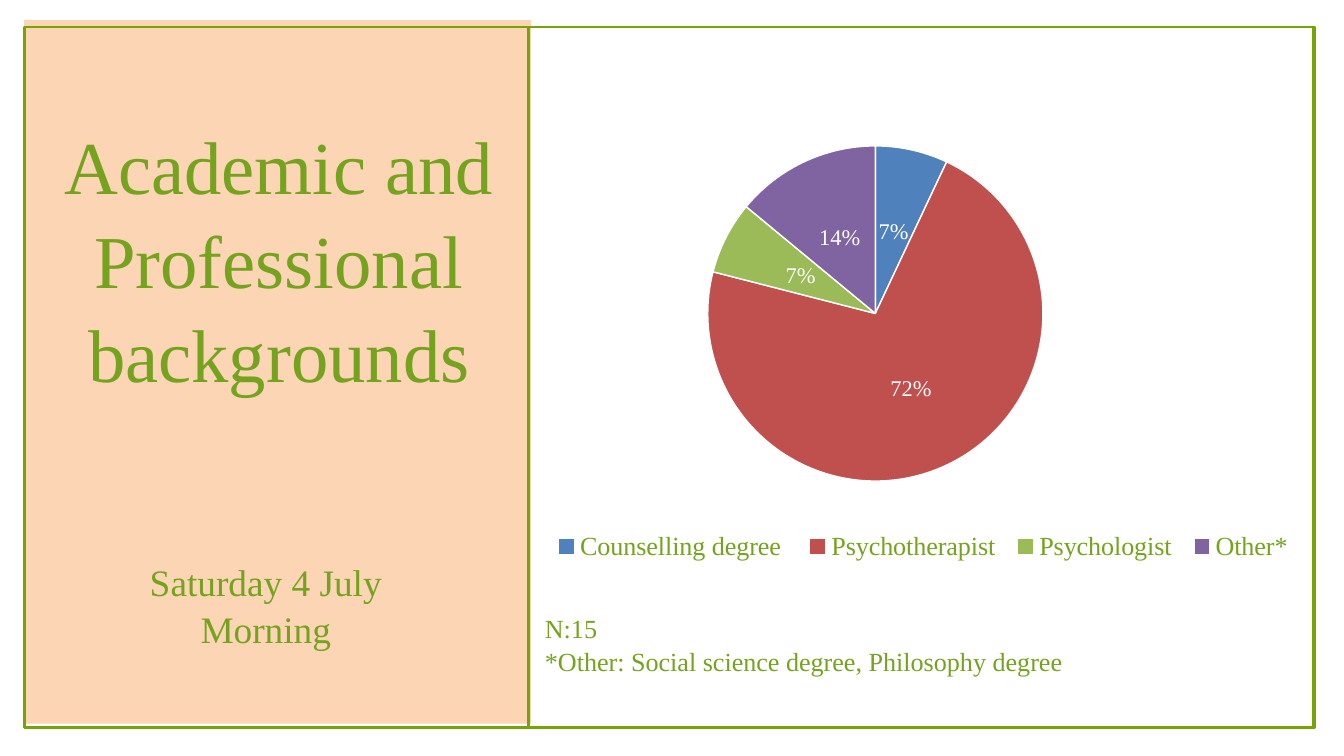
from lxml.etree import SubElement
from pptx import Presentation
from pptx.chart.data import CategoryChartData
from pptx.dml.color import RGBColor
from pptx.enum.chart import XL_CHART_TYPE as ChartType
from pptx.enum.chart import XL_LABEL_POSITION as LabelPosition
from pptx.enum.chart import XL_LEGEND_POSITION as LegendPosition
from pptx.enum.shapes import MSO_SHAPE as Shape
from pptx.enum.text import MSO_ANCHOR as Anchor
from pptx.enum.text import MSO_AUTO_SIZE as AutoSize
from pptx.enum.text import PP_ALIGN as Align
from pptx.oxml.ns import qn
from pptx.util import Inches, Pt

WIDTH, HEIGHT = Inches(20), Inches(11.25)
TITLE_ONLY = 5

PEACH = RGBColor(0xFC, 0xD5, 0xB5)
FRAME_GREEN = RGBColor(0x75, 0xA4, 0x05)
TEXT_GREEN = RGBColor(0x76, 0xA3, 0x1F)
WHITE = RGBColor(0xFF, 0xFF, 0xFF)

FONT = "Times New Roman"
LINE_SPACING = 1.05
FRAME_TOP, FRAME_HEIGHT, FRAME_LINE = 0.38, 10.47, 0.04

# Category, percentage, slice colour
BACKGROUNDS = [
    ("Counselling degree ", 7, RGBColor(0x4F, 0x81, 0xBD)),
    ("Psychotherapist", 72, RGBColor(0xC0, 0x50, 0x4D)),
    ("Psychologist", 7, RGBColor(0x9B, 0xBB, 0x59)),
    ("Other*", 14, RGBColor(0x80, 0x64, 0xA2)),
]


def box(left, top, width, height):
    return [Inches(length) for length in (left, top, width, height)]


def style_font(font, size, color):
    font.name = FONT
    font.size = Pt(size)
    font.color.rgb = color


def add_panel(slide, left, top, width, height):
    panel = slide.shapes.add_shape(Shape.RECTANGLE, *box(left, top, width, height))
    panel.shadow.inherit = False
    panel.fill.solid()
    panel.fill.fore_color.rgb = PEACH
    panel.line.fill.background()


def add_frame(slide, left, width):
    """Add an outline whose outer edge spans the given width."""
    half = FRAME_LINE / 2
    frame = slide.shapes.add_shape(
        Shape.RECTANGLE,
        *box(left + half, FRAME_TOP + half, width - FRAME_LINE, FRAME_HEIGHT - FRAME_LINE),
    )
    frame.shadow.inherit = False
    frame.fill.background()
    frame.line.color.rgb = FRAME_GREEN
    frame.line.width = Inches(FRAME_LINE)


def write_lines(text_frame, lines, size, align):
    text_frame.word_wrap = True
    text_frame.auto_size = AutoSize.NONE
    text_frame.vertical_anchor = Anchor.TOP
    for index, line in enumerate(lines):
        paragraph = text_frame.add_paragraph() if index else text_frame.paragraphs[0]
        paragraph.alignment = align
        paragraph.line_spacing = LINE_SPACING
        run = paragraph.add_run()
        run.text = line
        style_font(run.font, size, TEXT_GREEN)


def place_title(slide, text):
    title = slide.shapes.title
    title.left, title.top, title.width, title.height = box(0.82, 1.72, 6.66, 4.04)
    frame = title.text_frame
    frame.margin_left = frame.margin_right = frame.margin_top = frame.margin_bottom = 0
    write_lines(frame, [text], 80, Align.CENTER)
    slide.shapes._spTree.append(title._element)  # bring in front of the panel


def add_text(slide, bounds, lines, size, align=Align.LEFT):
    text_box = slide.shapes.add_textbox(*box(*bounds))
    write_lines(text_box.text_frame, lines, size, align)


def set_layout(parent, position, left, top, width, height, inner=False):
    """Place a chart part by shares of the chart's size."""
    for old in parent.findall(qn("c:layout")):
        parent.remove(old)
    layout = SubElement(parent, qn("c:layout"))
    parent.insert(position, layout)
    manual = SubElement(layout, qn("c:manualLayout"))
    settings = [("layoutTarget", "inner")] if inner else []
    settings += [("xMode", "edge"), ("yMode", "edge")]
    settings += [("x", left), ("y", top), ("w", width), ("h", height)]
    for name, value in settings:
        SubElement(manual, qn(f"c:{name}")).set("val", str(value))


def add_pie(slide):
    data = CategoryChartData()
    data.categories = [name for name, _, _ in BACKGROUNDS]
    data.add_series("Series 1", [share for _, share, _ in BACKGROUNDS])
    chart = slide.shapes.add_chart(
        ChartType.PIE, *box(5.83, 0.3, 14.25, 8.16), data
    ).chart
    chart.has_title = False

    plot = chart.plots[0]
    plot.vary_by_categories = True
    for index, (_, _, color) in enumerate(BACKGROUNDS):
        slice_format = plot.series[0].points[index].format
        slice_format.fill.solid()
        slice_format.fill.fore_color.rgb = color
        slice_format.line.color.rgb = WHITE
        slice_format.line.width = Pt(1.5)

    plot.has_data_labels = True
    labels = plot.data_labels
    labels.show_percentage = True
    labels.show_value = False
    labels.number_format = "0%"
    labels.number_format_is_linked = False
    labels.position = LabelPosition.CENTER
    style_font(labels.font, 24, WHITE)

    chart.has_legend = True
    legend = chart.legend
    legend.position = LegendPosition.BOTTOM
    legend.include_in_layout = False
    style_font(legend.font, 28, TEXT_GREEN)

    plot_area = chart._chartSpace.chart.plotArea
    set_layout(plot_area, 0, 0.33, 0.16, 0.35, 0.75, inner=True)
    set_layout(legend._element, 1, 0.16, 0.92, 0.79, 0.08)


def main():
    presentation = Presentation()
    presentation.slide_width, presentation.slide_height = WIDTH, HEIGHT
    slide = presentation.slides.add_slide(presentation.slide_layouts[TITLE_ONLY])

    add_panel(slide, 0.36, 0.3, 7.54, 10.47)
    add_frame(slide, 0.34, 19.25)
    add_frame(slide, 7.85, 11.71)
    place_title(slide, "Academic and Professional backgrounds")
    add_pie(slide)
    add_text(
        slide,
        (8.01, 9.04, 11.62, 1.45),
        ["N:15", "*Other: Social science degree, Philosophy degree"],
        28,
    )
    add_text(
        slide, (1.66, 8.24, 4.59, 1.45), ["Saturday 4 July", "Morning"], 40, Align.CENTER
    )
    presentation.save("out.pptx")


if __name__ == "__main__":
    main()
